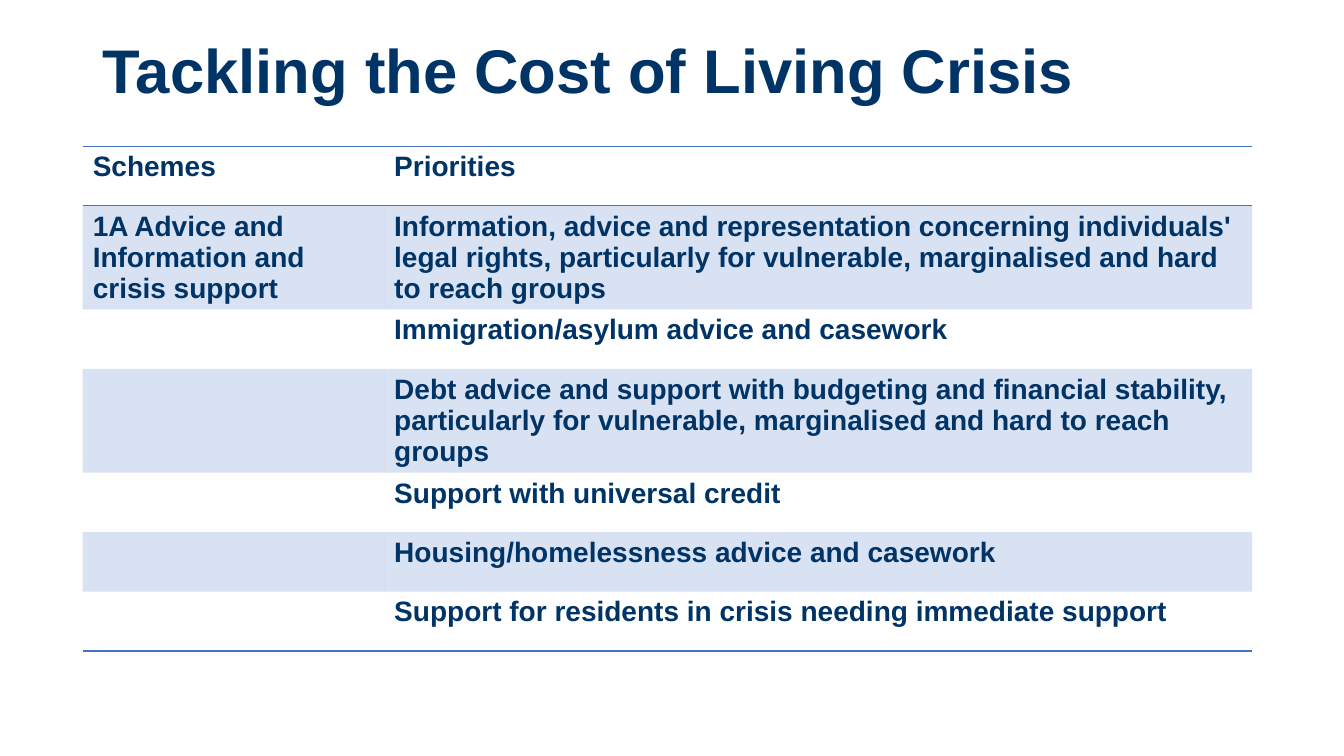
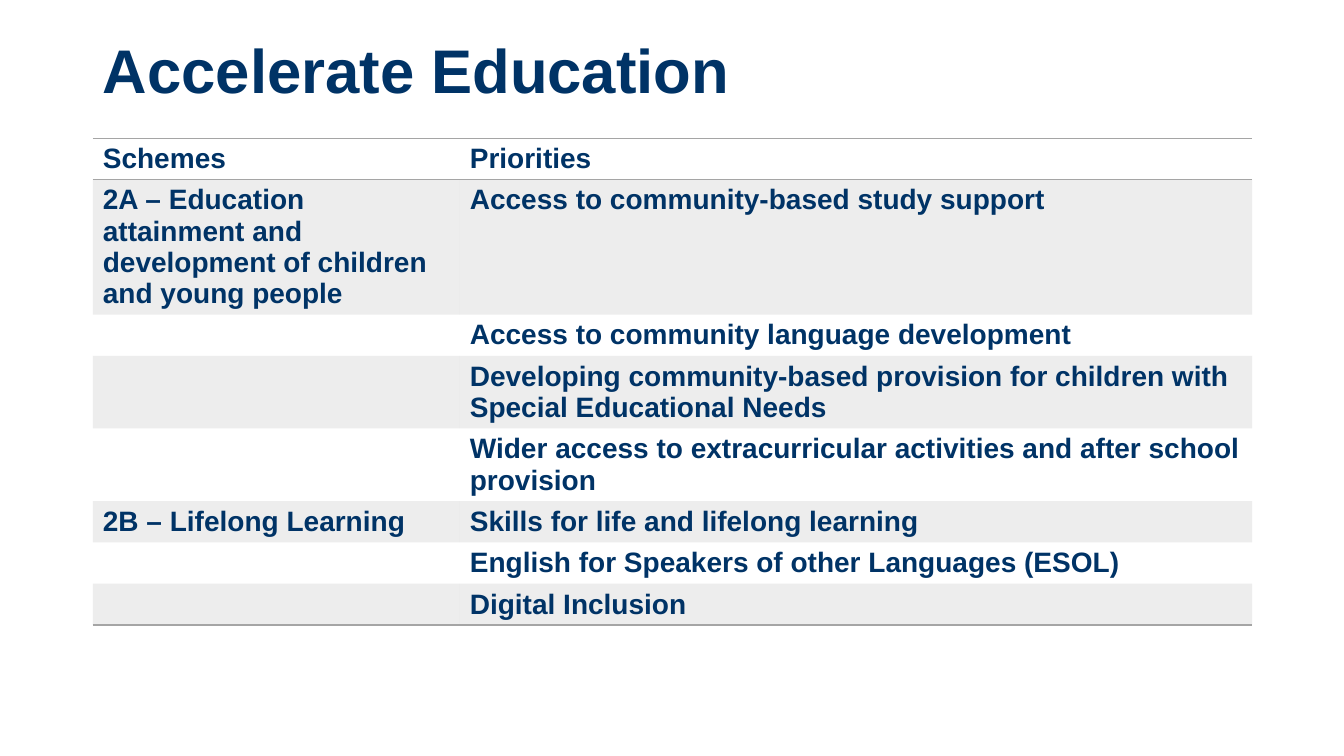
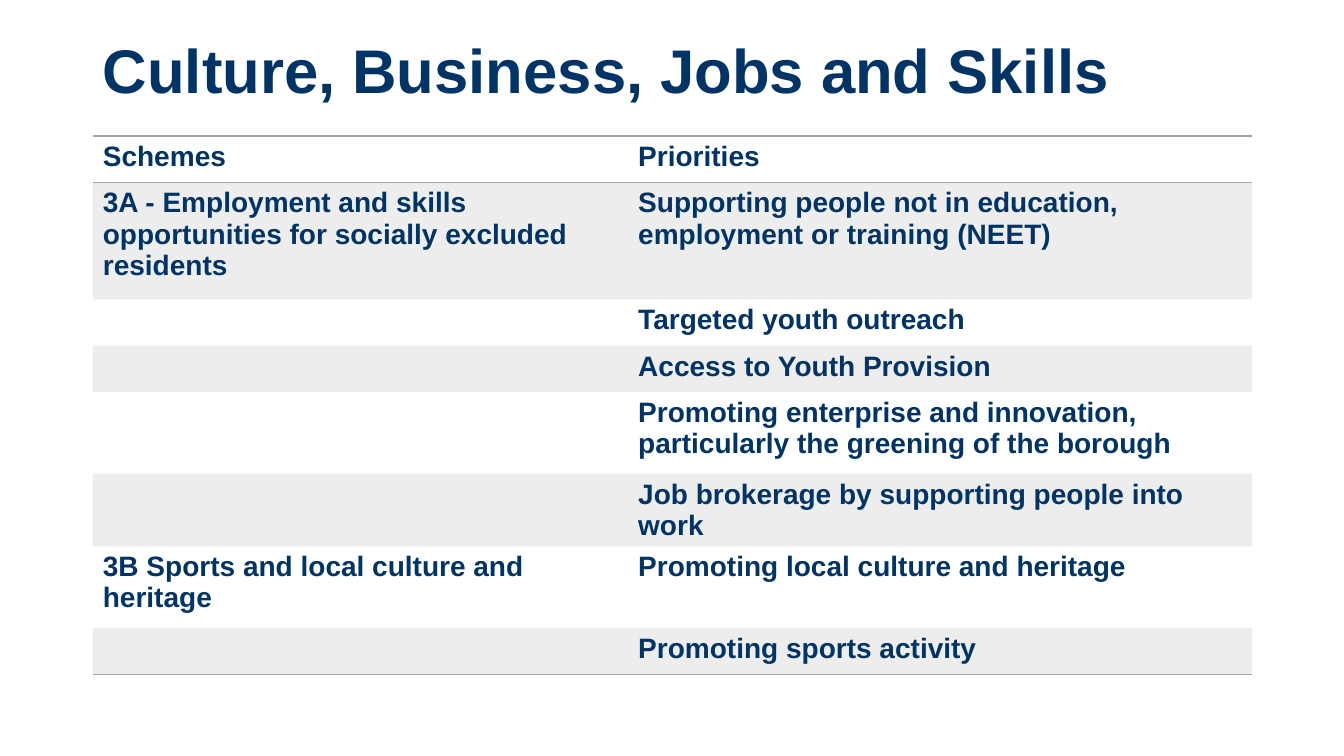
from dataclasses import dataclass

from lxml.etree import SubElement
from pptx import Presentation
from pptx.dml.color import RGBColor
from pptx.enum.text import MSO_ANCHOR, MSO_AUTO_SIZE, PP_ALIGN
from pptx.oxml.ns import qn
from pptx.util import Inches, Pt


@dataclass(frozen=True)
class Theme:
    font: str = "Arial"
    ink: str = "003366"
    blue: str = "4472C4"
    grey: str = "A5A5A5"
    title_size: int = 44
    table_size: int = 20
    rule_width: int = 1
    band_opacity: int = 20
    no_table_style: str = "{2D5ABB26-0587-4C30-8999-92F81FD0307C}"


THEME = Theme()
SLIDE_W, SLIDE_H = 13.33, 7.5
TITLE_BOX = (0.92, 0, 10.69, 1.45)
TABLE_RIGHT = 12.42
HEADINGS = ("Schemes", "Priorities")


@dataclass(frozen=True)
class Row:
    height: float
    priority: str
    scheme: str = ""


@dataclass(frozen=True)
class SchemeSlide:
    title: str
    accent: str
    left: float
    top: float
    height: float
    scheme_width: float
    header_height: float
    rows: tuple[Row, ...]


SLIDES = (
    SchemeSlide(
        "Tackling the Cost of Living Crisis", THEME.blue, 0.82, 1.45, 5.15, 2.99, 0.59,
        (
            Row(1.02, "Information, advice and representation concerning individuals' "
                "legal rights, particularly for vulnerable, marginalised and hard "
                "to reach groups", "1A Advice and Information and crisis support"),
            Row(0.59, "Immigration/asylum advice and casework"),
            Row(0.95, "Debt advice and support with budgeting and financial stability, "
                "particularly for vulnerable, marginalised and hard to reach groups"),
            Row(0.59, "Support with universal credit"),
            Row(0.59, "Housing/homelessness advice and casework"),
            Row(0.59, "Support for residents in crisis needing immediate support"),
        ),
    ),
    SchemeSlide(
        "Accelerate Education", THEME.grey, 0.92, 1.37, 5.13, 3.64, 0.41,
        (
            Row(0.45, "Access to community-based study support",
                "2A – Education attainment and development of children and young people"),
            Row(0.41, "Access to community language development"),
            Row(0.41, "Developing community-based provision for children with "
                "Special Educational Needs"),
            Row(0.41, "Wider access to extracurricular activities and after school provision"),
            Row(0.41, "Skills for life and lifelong learning", "2B – Lifelong Learning"),
            Row(0.41, "English for Speakers of other Languages (ESOL)"),
            Row(0.41, "Digital Inclusion"),
        ),
    ),
    SchemeSlide(
        "Culture, Business, Jobs and Skills", THEME.grey, 0.92, 1.35, 5.36, 5.31, 0.46,
        (
            Row(1.16, "Supporting people not in education, employment or training (NEET)",
                "3A - Employment and skills opportunities for socially excluded residents"),
            Row(0.46, "Targeted youth outreach"),
            Row(0.46, "Access to Youth Provision"),
            Row(0.81, "Promoting enterprise and innovation, particularly the greening "
                "of the borough"),
            Row(0.46, "Job brokerage by supporting people into work"),
            Row(0.81, "Promoting local culture and heritage",
                "3B Sports and local culture and heritage"),
            Row(0.46, "Promoting sports activity"),
        ),
    ),
)


def style_text(p, size: int) -> None:
    p.font.name = THEME.font
    p.font.size = Pt(size)
    p.font.bold = True
    p.font.color.rgb = RGBColor.from_string(THEME.ink)


def add_title(slide, text: str) -> None:
    s = slide.shapes.title
    s.left, s.top, s.width, s.height = (Inches(v) for v in TITLE_BOX)
    tf = s.text_frame
    tf.text = text
    tf.word_wrap = True
    tf.auto_size = MSO_AUTO_SIZE.NONE
    tf.vertical_anchor = MSO_ANCHOR.MIDDLE
    p = tf.paragraphs[0]
    p.alignment = PP_ALIGN.LEFT
    p.line_spacing = 0.9
    style_text(p, THEME.title_size)


def add_rule(cell, side: str, color: str) -> None:
    """Draw a line on one side of a cell; called before the cell's fill is set."""
    ln = SubElement(cell._tc.get_or_add_tcPr(), qn(f"a:ln{side}"),
                    w=str(Pt(THEME.rule_width)))
    SubElement(SubElement(ln, qn("a:solidFill")), qn("a:srgbClr"), val=color)


def fill_band(cell, color: str) -> None:
    cell.fill.solid()
    cell.fill.fore_color.rgb = RGBColor.from_string(color)
    clr = cell._tc.tcPr.find(qn("a:solidFill")).find(qn("a:srgbClr"))
    SubElement(clr, qn("a:alpha"), val=str(THEME.band_opacity * 1000))


def add_scheme_table(slide, data: SchemeSlide) -> None:
    lines = [HEADINGS] + [(row.scheme, row.priority) for row in data.rows]
    heights = [data.header_height] + [row.height for row in data.rows]
    width = TABLE_RIGHT - data.left
    frame = slide.shapes.add_table(
        len(lines), len(HEADINGS), Inches(data.left), Inches(data.top),
        Inches(width), Inches(data.height))
    table = frame.table
    table._tbl.tblPr.find(qn("a:tableStyleId")).text = THEME.no_table_style
    for column, w in zip(table.columns, (data.scheme_width, width - data.scheme_width)):
        column.width = Inches(w)

    for i, (line, height) in enumerate(zip(lines, heights)):
        table.rows[i].height = Inches(height)
        for j, text in enumerate(line):
            cell = table.cell(i, j)
            cell.text = text
            style_text(cell.text_frame.paragraphs[0], THEME.table_size)
            # Rules frame the header and close the table
            if i == 0:
                add_rule(cell, "T", data.accent)
            if i in (0, len(lines) - 1):
                add_rule(cell, "B", data.accent)
            # Every other row below the header is banded
            if i % 2:
                fill_band(cell, data.accent)
            else:
                cell.fill.background()
    frame.height = Inches(data.height)


def main() -> None:
    prs = Presentation()
    prs.slide_width, prs.slide_height = Inches(SLIDE_W), Inches(SLIDE_H)
    title_only = prs.slide_layouts[5]
    for data in SLIDES:
        slide = prs.slides.add_slide(title_only)
        add_title(slide, data.title)
        add_scheme_table(slide, data)
    prs.save("out.pptx")


if __name__ == "__main__":
    main()
